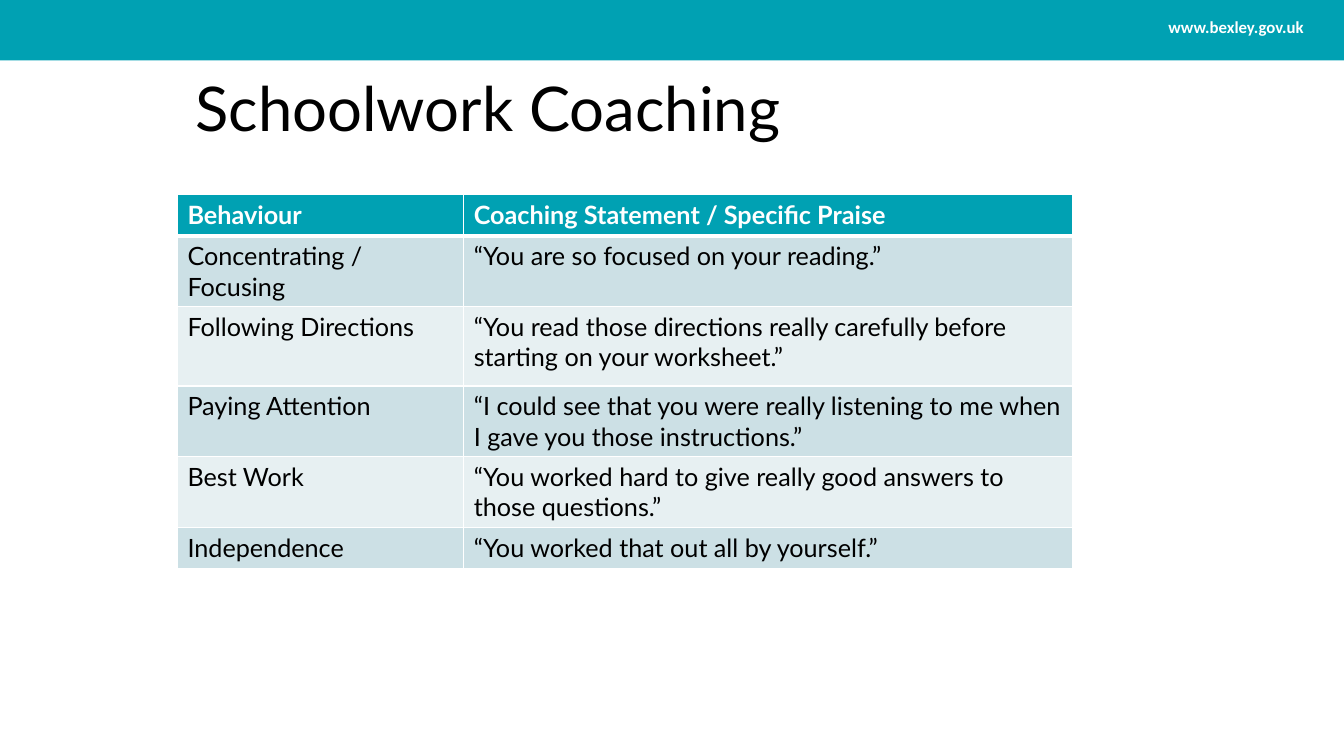
import pptx
import pptx.dml.color
import pptx.enum.shapes
import pptx.enum.text
import pptx.oxml
import pptx.oxml.ns
import pptx.util

Inches = pptx.util.Inches
Pt = pptx.util.Pt
RGBColor = pptx.dml.color.RGBColor
PP_ALIGN = pptx.enum.text.PP_ALIGN
MSO_ANCHOR = pptx.enum.text.MSO_ANCHOR

TEAL = RGBColor(0x00, 0xA1, 0xB3)
PALE_TEAL = RGBColor(0xCC, 0xE0, 0xE5)
PALER_TEAL = RGBColor(0xE7, 0xF0, 0xF2)
WHITE = RGBColor(0xFF, 0xFF, 0xFF)
BLACK = RGBColor(0x00, 0x00, 0x00)

ADDRESS_FORMAT = {"name": "Calibri", "size": Pt(12), "bold": True}
TITLE_FORMAT = {"name": "Lato", "size": Pt(44), "bold": False}
HEADING_FORMAT = {"name": "Lato", "size": Pt(18), "bold": True}
STATEMENT_FORMAT = {"name": "Lato", "size": Pt(18), "bold": False}

COLUMN_WIDTHS = [2.84, 6.04]
ROW_HEIGHTS = [0.41, 0.69, 0.79, 0.7, 0.7, 0.41]
COACHING_ROWS = [
    ("Behaviour", "Coaching Statement / Specific Praise"),
    ("Concentrating / Focusing", "“You are so focused on your reading.”"),
    ("Following Directions",
     "“You read those directions really carefully before starting on your worksheet.”"),
    ("Paying Attention",
     "“I could see that you were really listening to me when I gave you those instructions.”"),
    ("Best Work", "“You worked hard to give really good answers to those questions.”"),
    ("Independence", "“You worked that out all by yourself.”"),
]


def write_text(paragraph, wording, text_format, color):
    run = paragraph.add_run()
    run.text = wording
    for attribute, value in text_format.items():
        setattr(run.font, attribute, value)
    run.font.color.rgb = color


def add_banner(slide, width, height):
    banner = slide.shapes.add_shape(
        pptx.enum.shapes.MSO_SHAPE.RECTANGLE, 0, 0, width, height)
    banner.shadow.inherit = False
    banner.fill.solid()
    banner.fill.fore_color.rgb = TEAL
    banner.line.fill.background()


def add_label(slide, bounds, wording, text_format, color, align, anchor, spacing):
    frame = slide.shapes.add_textbox(*map(Inches, bounds)).text_frame
    frame.word_wrap = True
    frame.vertical_anchor = anchor
    paragraph = frame.paragraphs[0]
    paragraph.alignment = align
    paragraph.line_spacing = spacing
    write_text(paragraph, wording, text_format, color)


def add_cell_borders(cell, widths):
    properties = cell._tc.get_or_add_tcPr()
    for side, points in widths.items():
        properties.append(pptx.oxml.parse_xml(
            f'<a:ln{side} {pptx.oxml.ns.nsdecls("a")} w="{Pt(points)}">'
            f'<a:solidFill><a:srgbClr val="{WHITE}"/></a:solidFill></a:ln{side}>'))


def add_coaching_table(slide, left, top):
    coaching = slide.shapes.add_table(
        len(COACHING_ROWS), len(COLUMN_WIDTHS), Inches(left), Inches(top),
        Inches(sum(COLUMN_WIDTHS)), Inches(sum(ROW_HEIGHTS))).table
    for column, width in zip(coaching.columns, COLUMN_WIDTHS):
        column.width = Inches(width)
    for row_index, wordings in enumerate(COACHING_ROWS):
        coaching.rows[row_index].height = Inches(ROW_HEIGHTS[row_index])
        heading = row_index == 0
        if heading:
            band, color, text_format = TEAL, WHITE, HEADING_FORMAT
        else:
            band = PALE_TEAL if row_index % 2 else PALER_TEAL
            color, text_format = BLACK, STATEMENT_FORMAT
        widths = {"L": 1, "R": 1, "T": 3 if row_index == 1 else 1, "B": 3 if heading else 1}
        for column_index, wording in enumerate(wordings):
            cell = coaching.cell(row_index, column_index)
            add_cell_borders(cell, widths)
            cell.fill.solid()
            cell.fill.fore_color.rgb = band
            write_text(cell.text_frame.paragraphs[0], wording, text_format, color)


def main():
    presentation = pptx.Presentation()
    presentation.slide_width = Inches(13.33)
    presentation.slide_height = Inches(7.5)
    slide = presentation.slides.add_slide(presentation.slide_layouts[6])
    add_banner(slide, presentation.slide_width, Inches(0.6))
    add_label(slide, (11.42, 0.12, 1.68, 0.3), "www.bexley.gov.uk",
              ADDRESS_FORMAT, WHITE, PP_ALIGN.CENTER, MSO_ANCHOR.TOP, 1.0)
    add_coaching_table(slide, 1.76, 1.93)
    add_label(slide, (1.84, 0.72, 11.5, 0.78), "Schoolwork Coaching",
              TITLE_FORMAT, BLACK, PP_ALIGN.LEFT, MSO_ANCHOR.MIDDLE, 0.9)
    presentation.save("out.pptx")


if __name__ == "__main__":
    main()
